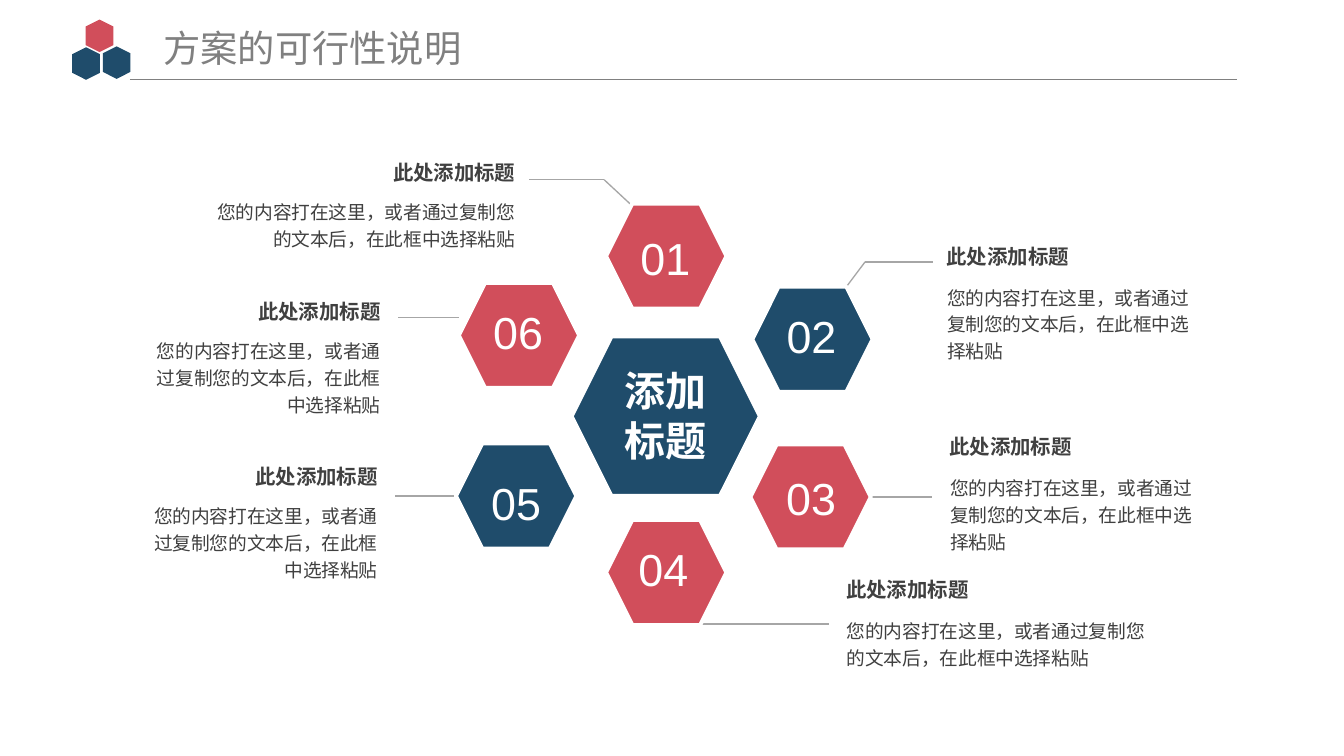
import pptx
import pptx.util
import pptx.dml.color
import pptx.enum.shapes
import pptx.enum.text
import pptx.oxml.ns
from lxml import etree

Inches = pptx.util.Inches
Pt = pptx.util.Pt
ALIGN = pptx.enum.text.PP_ALIGN
COLORS = {"navy": "1F4C6B", "red": "D14E5B", "white": "FFFFFF",
          "title": "808080", "text": "404040", "leader": "A6A6A6"}
RGB = {k: pptx.dml.color.RGBColor.from_string(v) for k, v in COLORS.items()}
CJK = "Noto Sans CJK SC"
HEADING = "此处添加标题"
BODY = "您的内容打在这里，或者通过复制您的文本后，在此框中选择粘贴"

prs = pptx.Presentation()
prs.slide_width, prs.slide_height = Inches(14.06), Inches(7.91)
s = prs.slides.add_slide(prs.slide_layouts[6])


def add_text(text, x, y, w, h, size, color, font=CJK, align=ALIGN.LEFT,
             bold=False, spacing=1.0, wrap=True):
    tf = s.shapes.add_textbox(Inches(x), Inches(y), Inches(w), Inches(h)).text_frame
    tf.word_wrap = wrap
    tf.auto_size = pptx.enum.text.MSO_AUTO_SIZE.SHAPE_TO_FIT_TEXT
    p = tf.paragraphs[0]
    p.text = text
    p.alignment = align
    p.line_spacing = spacing
    r = p.runs[0]
    r.font.size, r.font.bold, r.font.name = Pt(size), bold, font
    r.font.color.rgb = RGB[color]
    # East Asian glyphs take their font from a:ea
    ea = etree.SubElement(r.font._element, pptx.oxml.ns.qn("a:ea"))
    ea.set("typeface", font)


def add_hexagon(x, y, w, h, color):
    sp = s.shapes.add_shape(pptx.enum.shapes.MSO_SHAPE.HEXAGON,
                            Inches(x), Inches(y), Inches(w), Inches(h))
    sp.shadow.inherit = False
    sp.fill.solid()
    sp.fill.fore_color.rgb = RGB[color]
    sp.line.color.rgb = RGB["white"]
    sp.line.width = Pt(3)
    return sp


# Header mark and title
for x, y, color in [(0.73, 0.52, "navy"), (0.87, 0.23, "red"), (1.05, 0.51, "navy")]:
    sp = add_hexagon(x, y, 0.34, 0.29, color)
    sp.rotation = 90
    sp.line.fill.background()
add_text("方案的可行性说明", 1.61, 0.21, 3.36, 0.57, 28.1, "title", wrap=False)

# Header rule, then the leader lines
lines = [
    ("title", 0.5, [(1.36, 0.83), (12.94, 0.83)]),
    ("leader", 1, [(6.61, 2.15), (6.32, 1.88), (5.53, 1.88)]),
    ("leader", 1, [(8.84, 3.02), (9.05, 2.74), (9.76, 2.74)]),
    ("leader", 1, [(9.11, 5.2), (9.75, 5.2)]),
    ("leader", 1, [(7.32, 6.53), (8.67, 6.53)]),
    ("leader", 1, [(4.77, 5.19), (4.13, 5.19)]),
    ("leader", 1, [(4.8, 3.32), (4.16, 3.32)]),
]
for color, width, points in lines:
    for (x1, y1), (x2, y2) in zip(points, points[1:]):
        cxn = s.shapes.add_connector(pptx.enum.shapes.MSO_CONNECTOR.STRAIGHT,
                                     Inches(x1), Inches(y1), Inches(x2), Inches(y2))
        cxn.line.color.rgb = RGB[color]
        cxn.line.width = Pt(width)
        etree.SubElement(cxn._element.spPr, pptx.oxml.ns.qn("a:effectLst"))

# Central hexagon
add_hexagon(5.98, 3.52, 1.97, 1.67, "navy")
add_text("添加标题", 6.36, 3.78, 1.21, 1.14, 30.9, "white",
         align=ALIGN.CENTER, bold=True)

# Items: number, colour, hexagon x y, number box x y w, line spacing,
# heading x y, body width
items = [
    ("01", "red", 6.34, 2.13, 6.5, 2.25, 0.92, 1.2, 3.99, 1.63, 3.44),
    ("02", "navy", 7.87, 3.0, 8.06, 3.18, 0.86, 1.0, 9.78, 2.5, 2.8),
    ("03", "red", 7.85, 4.65, 8.0, 4.76, 0.97, 1.2, 9.81, 4.49, 2.8),
    ("04", "red", 6.34, 5.44, 6.51, 5.62, 0.86, 1.0, 8.73, 5.99, 3.38),
    ("05", "navy", 4.77, 4.64, 4.97, 4.82, 0.86, 1.2, 2.55, 4.81, 2.63),
    ("06", "red", 4.8, 2.96, 4.99, 3.14, 0.86, 1.0, 2.58, 3.08, 2.63),
]
for num, color, hx, hy, nx, ny, nw, spacing, tx, ty, body_w in items:
    add_hexagon(hx, hy, 1.26, 1.1, color)
    add_text(num, nx, ny, nw, 0.67, 33.8, "white", font="Arial",
             align=ALIGN.CENTER, spacing=spacing)
    add_text(HEADING, tx, ty, 1.5, 0.36, 15.4, "text",
             align=ALIGN.RIGHT, bold=True, wrap=False)
    # Left-hand bodies share the heading's right edge
    if tx < 7:
        body_x, body_y, align = tx + 1.5 - body_w, ty + 0.38, ALIGN.RIGHT
    else:
        body_x, body_y, align = tx + 0.03, ty + 0.4, ALIGN.LEFT
    body_h = 0.66 if body_w > 3 else 0.95
    add_text(BODY, body_x, body_y, body_w, body_h, 14.1, "text",
             align=align, spacing=1.2)

prs.save("out.pptx")
